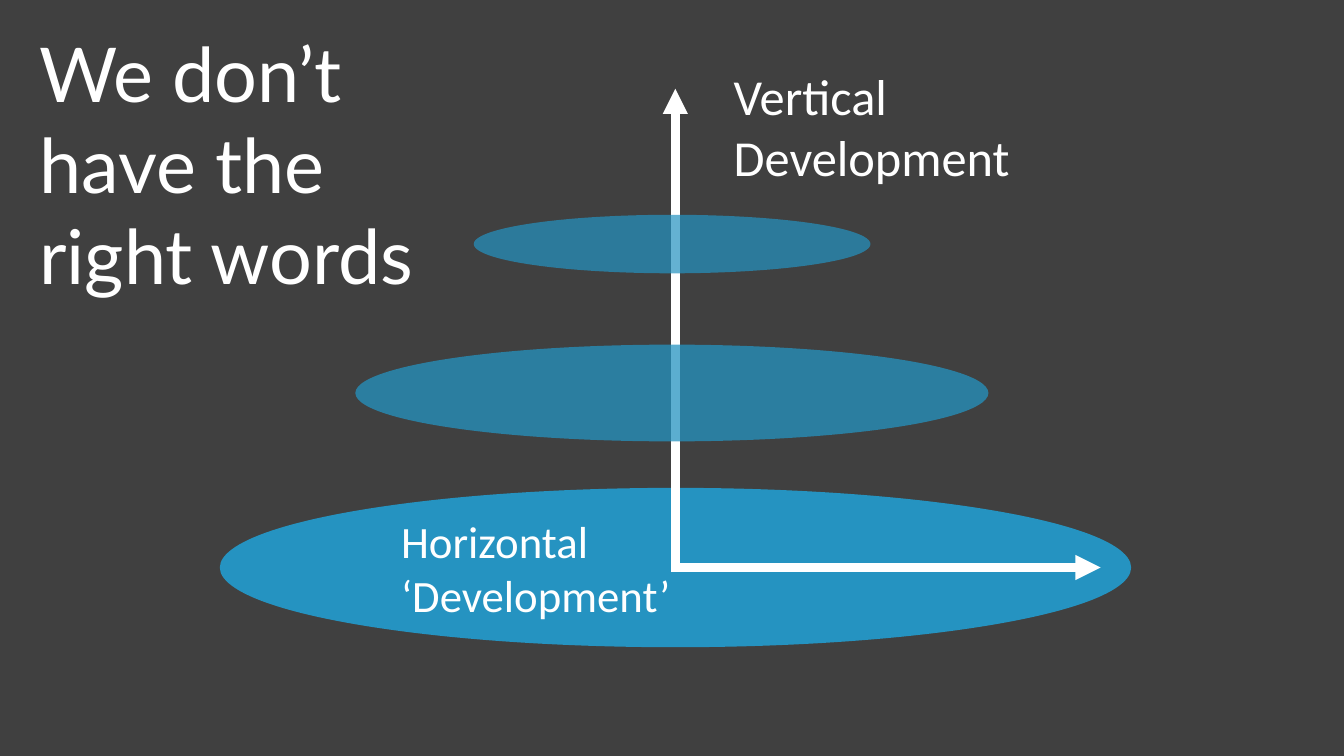
from pptx import Presentation
from pptx.dml.color import RGBColor
from pptx.enum.shapes import MSO_CONNECTOR as Link, MSO_SHAPE as Kind
from pptx.oxml.ns import qn
from pptx.util import Pt
from lxml.etree import SubElement as Sub

DARK = RGBColor(0x40, 0x40, 0x40)
BLUE = RGBColor(0x25, 0x93, 0xC1)
WHITE = RGBColor(0xFF, 0xFF, 0xFF)


def add_disc(slide, left, top, width, height, alpha=100):
    disc = slide.shapes.add_shape(
        Kind.OVAL, Pt(left), Pt(top), Pt(width), Pt(height))
    disc.shadow.inherit = False
    disc.fill.solid()
    disc.fill.fore_color.rgb = BLUE
    disc.line.fill.background()
    if alpha < 100:
        color = disc.fill._xPr.find(".//" + qn("a:srgbClr"))
        Sub(color, qn("a:alpha"), val=str(alpha * 1000))


def add_arrow(slide, x1, y1, x2, y2):
    arrow = slide.shapes.add_connector(
        Link.STRAIGHT, Pt(x1), Pt(y1), Pt(x2), Pt(y2))
    arrow.line.color.rgb = WHITE
    arrow.line.width = Pt(6)
    Sub(arrow.line._get_or_add_ln(), qn("a:tailEnd"), type="triangle")
    Sub(arrow._element.spPr, qn("a:effectLst"))


def add_label(slide, text, left, top, width, height, size, font="Calibri"):
    box = slide.shapes.add_textbox(
        Pt(left), Pt(top), Pt(width), Pt(height))
    frame = box.text_frame
    frame.word_wrap = True
    frame.text = text
    style = frame.paragraphs[0].font
    style.name = font
    style.size = Pt(size)
    style.color.rgb = WHITE


def main():
    deck = Presentation()
    deck.slide_width, deck.slide_height = Pt(960), Pt(540)
    slide = deck.slides.add_slide(deck.slide_layouts[6])
    slide.background.fill.solid()
    slide.background.fill.fore_color.rgb = DARK

    # Ground level with its horizontal axis
    add_disc(slide, 157, 348.5, 651, 113.8)
    add_arrow(slide, 482.4, 405.4, 786.2, 405.4)
    add_label(slide, "Horizontal ‘Development’", 279.4, 363.6, 220.3, 85, 32)

    # Vertical axis, seen through the upper levels
    add_arrow(slide, 482.4, 408.6, 482.4, 63.4)
    add_disc(slide, 338.4, 153.4, 283.4, 41.8, 71)
    add_disc(slide, 253.8, 246.2, 452.2, 69.1, 75)
    add_label(slide, "Vertical Development", 517, 43.2, 220.3, 94.3, 36)

    # Title
    add_label(slide, "We don’t have the right words",
              20.9, 15.8, 283, 269.3, 54, "Lato")

    deck.save("out.pptx")


if __name__ == "__main__":
    main()
